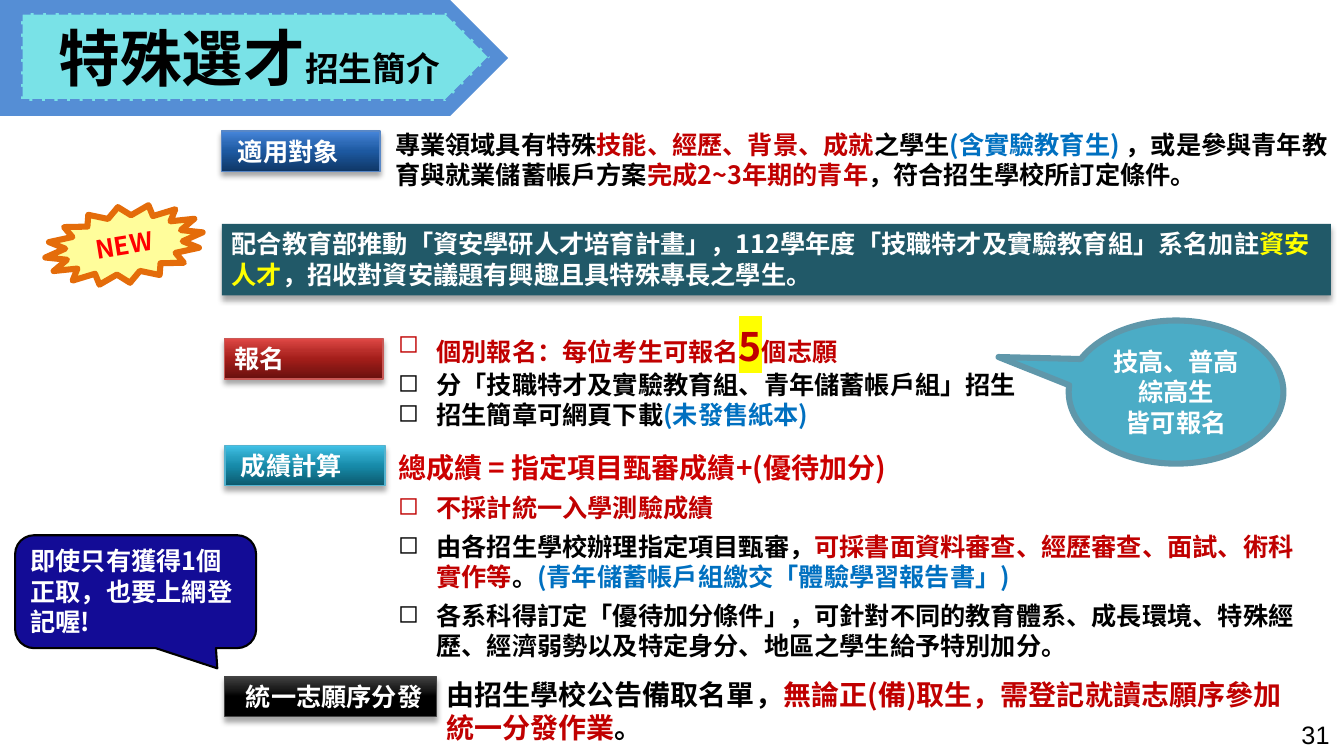
from lxml import etree
from pptx import Presentation
from pptx.dml.color import RGBColor as RGB
from pptx.enum.dml import MSO_LINE as Dash
from pptx.enum.shapes import MSO_SHAPE as Kind
from pptx.enum.text import MSO_ANCHOR as Anchor, PP_ALIGN as Align
from pptx.oxml import parse_xml
from pptx.oxml.ns import nsdecls, qn
from pptx.util import Inches, Pt

FONT = "Noto Sans CJK SC"
HUES = {
    "black": "000000", "white": "FFFFFF", "red": "C00000", "rose": "CC0000",
    "blue": "0070C0", "yellow": "FFFF00", "bright": "FF0000",
    "banner": "558ED5", "aqua": "79E2E7", "teal": "215968", "navy": "130C96",
    "cream": "FFFD9B", "orange": "E46C0A", "sea": "4BACC6", "rim": "5F97AA",
}

deck = Presentation()
deck.slide_width, deck.slide_height = Inches(13.33), Inches(7.5)
slide = deck.slides.add_slide(deck.slide_layouts[6])


def draw(kind, box, fill=None, line=None, width=1, shade=False):
    """Add a shape, or a text box when kind is None."""
    spot = [Inches(v) for v in box]
    if kind is None:
        return slide.shapes.add_textbox(*spot)
    shape = slide.shapes.add_shape(kind, *spot)
    shape.shadow.inherit = False
    if fill:
        shape.fill.solid()
        shape.fill.fore_color.rgb = RGB.from_string(HUES[fill])
    if line:
        shape.line.color.rgb = RGB.from_string(HUES.get(line, line))
        shape.line.width = Pt(width)
    else:
        shape.line.fill.background()
    if shade:
        glow = shape._element.spPr.find(qn("a:effectLst"))
        glow.append(parse_xml(
            f'<a:outerShdw {nsdecls("a")} blurRad="50800" dist="38100" dir="5400000" '
            'rotWithShape="0"><a:srgbClr val="000000"><a:alpha val="35000"/>'
            '</a:srgbClr></a:outerShdw>'))
    return shape


def write(shape, paras, left=0.1, right=0.1, anchor=Anchor.TOP, align=Align.LEFT):
    """Fill a shape; a paragraph is (options, (text, colour, size)...)."""
    frame = shape.text_frame
    frame.word_wrap = True
    frame.vertical_anchor = anchor
    frame.margin_left, frame.margin_right = Inches(left), Inches(right)
    for i, (opts, *runs) in enumerate(paras):
        para = frame.add_paragraph() if i else frame.paragraphs[0]
        para.alignment = align
        para.space_before = Pt(opts.get("gap", 0))
        font = para.font
        font.name, font.size = opts.get("font", FONT), Pt(opts.get("size", 18))
        font.bold = opts.get("bold", True)
        face = etree.SubElement(font._element, qn("a:ea"))
        face.set("typeface", FONT)
        props = para._p.pPr
        if "indent" in opts:
            props.set("marL", str(Inches(opts["indent"])))
        if opts.get("box"):
            props.set("marL", str(Inches(0.38)))
            props.set("indent", str(Inches(-0.38)))
            mark = etree.Element(qn("a:buChar"))
            mark.set("char", "◻")
            font._element.addprevious(mark)
        for text, hue, *size in runs:
            run = para.add_run()
            run.text = text
            run.font.color.rgb = RGB.from_string(HUES[hue])
            if size:
                run.font.size = Pt(size[0])
    return frame


# Page number
write(draw(None, (12.81, 7.09, 0.52, 0.4)),
      [({"font": "Arial", "bold": False}, ("31", "black"))])

# Title banner
draw(Kind.PENTAGON, (0, 0, 5.04, 1.15), "banner")
title = draw(Kind.PENTAGON, (0.21, 0.13, 4.65, 0.87), "aqua", "banner", 2.25)
title.line.dash_style = Dash.SQUARE_DOT
write(title, [({"size": 44}, ("特殊選才", "black"), ("招生簡介", "black", 24))],
      left=0.37, right=0, anchor=Anchor.MIDDLE)

# Section labels: text, box, left inset, edge, gradient from bottom to top
LABELS = [
    ("適用對象", (2.2, 1.3, 1.57, 0.4), 0.16, "5887C6", "0F3766 1D59A1 2D6AB6 4786DB"),
    ("報名", (2.23, 3.36, 1.57, 0.4), 0.1, "C95956", "68100E A41E1A B92E2A DF4845"),
    ("成績計算", (2.23, 4.42, 1.59, 0.4), 0.16, "54B3CF", "0B586C 178BAA 279FC0 41C1E6"),
    ("統一志願序分發", (2.23, 6.71, 2.1, 0.4), 0.21, "444444", "000000 000000 1D1D1D 424242"),
]
for text, box, left, edge, ramp in LABELS:
    label = draw(Kind.RECTANGLE, box, line=edge, shade=True)
    stops = "".join(f'<a:gs pos="{pos}000"><a:srgbClr val="{hue}"/></a:gs>'
                    for pos, hue in zip((0, 50, 70, 100), ramp.split()))
    label._element.spPr.find(qn("a:prstGeom")).addnext(parse_xml(
        f'<a:gradFill {nsdecls("a")} rotWithShape="1"><a:gsLst>{stops}</a:gsLst>'
        '<a:lin ang="16200000" scaled="0"/></a:gradFill>'))
    write(label, [({}, (text, "white"))], left=left, right=0)

# Who may apply
write(draw(None, (3.82, 1.23, 9.52, 0.75)), [
    ({"gap": 6}, ("專業領域具有特殊", "black"), ("技能、經歷、背景、成就", "red"),
     ("之學生", "black"), ("(含實驗教育生) ", "blue"),
     ("，或是參與青年教育與就業儲蓄帳戶方案", "black"),
     ("完成2~3年期的青年", "red"), ("，符合招生學校所訂定條件。", "black"))])

# New programme
write(draw(Kind.RECTANGLE, (2.2, 2.22, 11, 0.71), "teal", shade=True), [
    ({}, ("配合教育部推動「資安學研人才培育計畫」，112學年度「技職特才及實驗教育組」系名加註", "white"),
     ("資安人才", "yellow"), ("，招收對資安議題有興趣且具特殊專長之學生。", "white"))])
star = draw(Kind.STAR_16_POINT, (0.44, 2.05, 1.58, 0.76), "cream", "orange", 4.33)
star.rotation = 350.9
write(star, [({}, ("NEW", "bright"))], align=Align.CENTER)

# Sign-up
signup = write(draw(None, (3.85, 3.15, 9.19, 1.18)), [
    ({"box": True}, ("個別報名：每位考生可報名", "red"), ("5", "red", 28), ("個志願", "red")),
    ({"box": True}, ("分「技職特才及實驗教育組、青年儲蓄帳戶組」招生", "black")),
    ({"box": True}, ("招生簡章可網頁下載", "black"), ("(未發售紙本)", "blue"))])
five = signup.paragraphs[0].runs[1].font._element
five.find(qn("a:solidFill")).addnext(parse_xml(
    f'<a:highlight {nsdecls("a")}><a:srgbClr val="{HUES["yellow"]}"/></a:highlight>'))

# Scoring and placement
item = {"box": True, "gap": 6}
write(draw(None, (3.85, 4.42, 9.19, 3.03)), [
    ({"gap": 12, "size": 20}, ("總成績 = 指定項目甄審成績+(優待加分)", "rose")),
    (item, ("不採計統一入學測驗成績", "red")),
    (item, ("由各招生學校辦理指定項目甄審，", "black"),
     ("可採書面資料審查、經歷審查、面試、術科實作等", "red"), ("。", "black"),
     ("(青年儲蓄帳戶組繳交「體驗學習報告書」)", "blue")),
    (item, ("各系科得訂定「優待加分條件」，可針對不同的教育體系、成長環境、特殊經歷、"
            "經濟弱勢以及特定身分、地區之學生給予特別加分。", "black")),
    ({"gap": 12, "size": 20, "indent": 0.48}, ("由招生學校公告備取名單，", "black"),
     ("無論正(備)取生，需登記就讀志願序參加統一分發作業", "red"), ("。", "black"))])

# Callouts
CALLS = [
    (Kind.ROUNDED_RECTANGULAR_CALLOUT, (0.15, 5.31, 2.39, 1.12), "navy", "black", 1.5,
     (0.339, 0.679, 0.167), ["即使只有獲得1個正取，也要上網登記喔!"], Align.LEFT),
    (Kind.OVAL_CALLOUT, (10.6, 3.18, 2.13, 1.42), "sea", "rim", 4.33,
     (-0.827, -0.245), ["技高、普高", "綜高生", "皆可報名"], Align.CENTER),
]
for kind, box, fill, line, width, tail, lines, align in CALLS:
    call = draw(kind, box, fill, line, width)
    for i, part in enumerate(tail):
        call.adjustments[i] = part
    write(call, [({}, (text, "white")) for text in lines], align=align)

deck.save("out.pptx")
